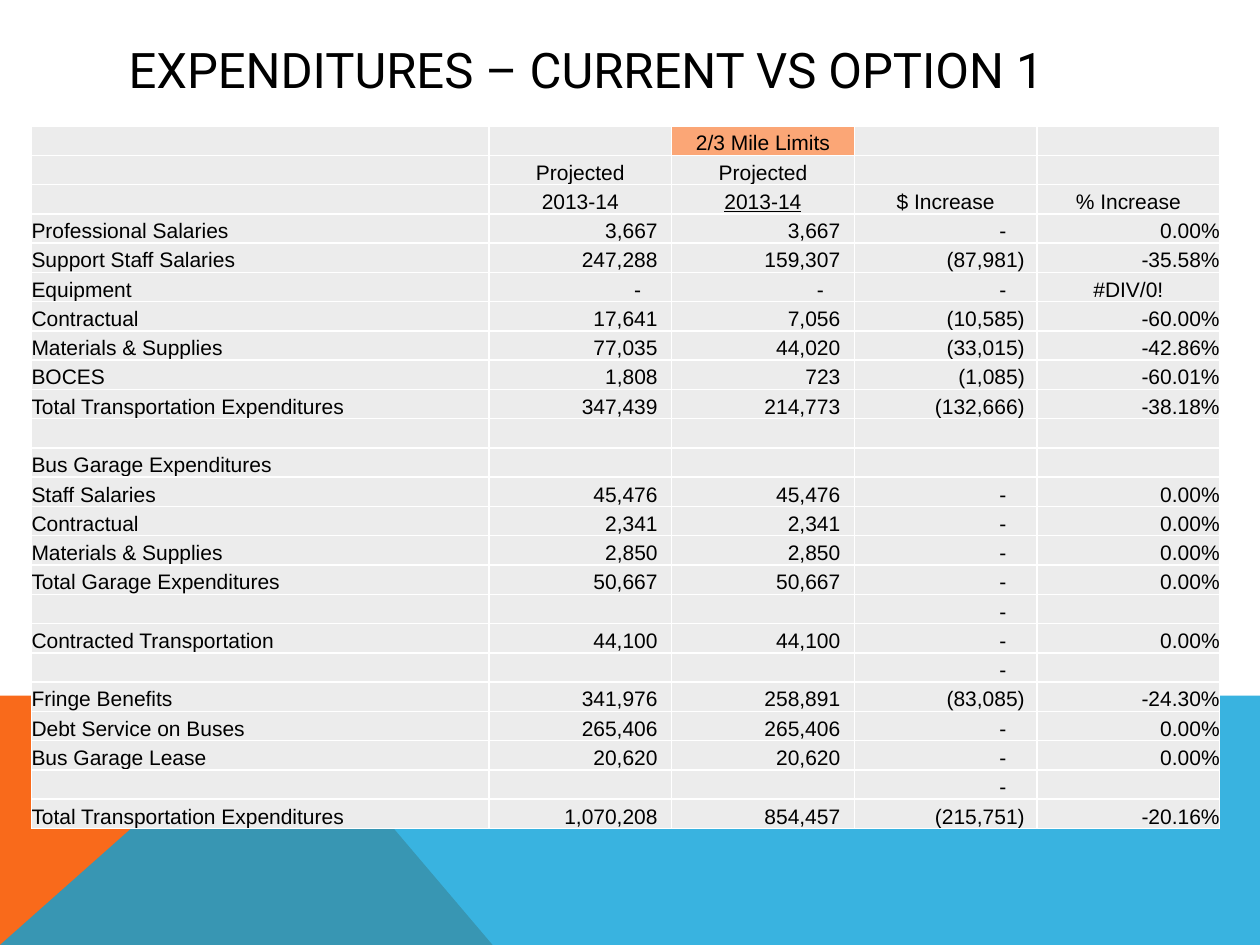
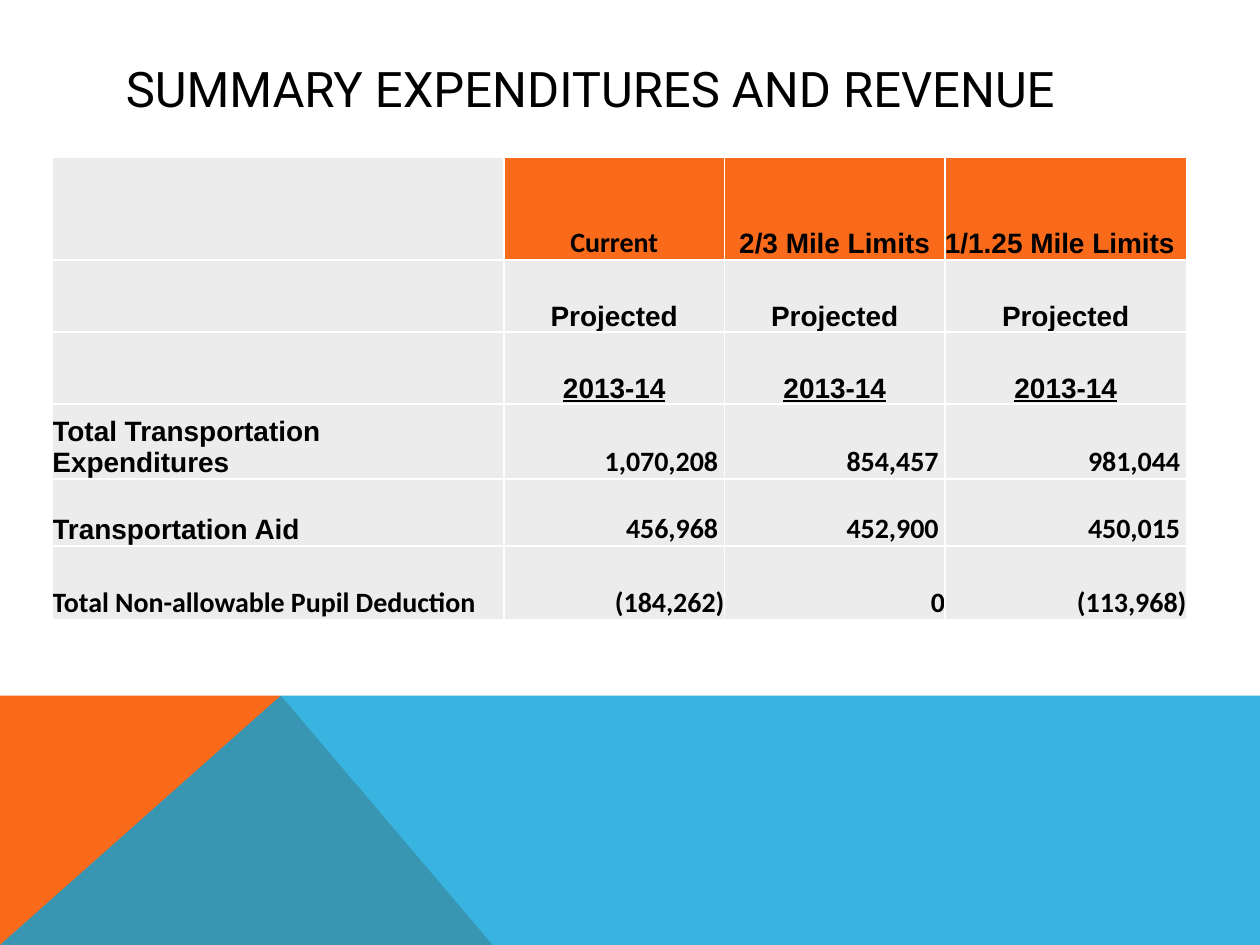
from lxml.etree import SubElement
from pptx import Presentation
from pptx.dml.color import RGBColor
from pptx.enum.text import MSO_ANCHOR as Anchor, PP_ALIGN as Align
from pptx.oxml.ns import qn
from pptx.util import Pt

COLORS = {
    "orange": "F96A1B",
    "peach": "FBA676",
    "blue": "08A1D9",
    "gray": "ECECEC",
    "white": "FFFFFF",
    "black": "000000",
}
SLIDE_W, SLIDE_H = 720, 540
BAND_TOP, BAND_PEAK, BAND_FOOT = 397.5, 160.5, 281.5
ORANGE_BAND = [(0, SLIDE_H), (0, BAND_TOP), (BAND_PEAK, BAND_TOP), (BAND_FOOT, SLIDE_H)]
BLUE_BAND = [(0, SLIDE_H), (BAND_PEAK, BAND_TOP), (SLIDE_W, BAND_TOP), (SLIDE_W, SLIDE_H)]

EXPENDITURES = [
    ("", "", "2/3 Mile Limits", "", ""),
    ("", "Projected", "Projected", "", ""),
    ("", "2013-14", "2013-14", "$ Increase", "% Increase"),
    ("Professional Salaries", "3,667", "3,667", "-", "0.00%"),
    ("Support Staff Salaries", "247,288", "159,307", "(87,981)", "-35.58%"),
    ("Equipment", "-", "-", "-", "#DIV/0!"),
    ("Contractual", "17,641", "7,056", "(10,585)", "-60.00%"),
    ("Materials & Supplies", "77,035", "44,020", "(33,015)", "-42.86%"),
    ("BOCES", "1,808", "723", "(1,085)", "-60.01%"),
    ("Total Transportation Expenditures", "347,439", "214,773", "(132,666)", "-38.18%"),
    ("", "", "", "", ""),
    ("Bus Garage Expenditures", "", "", "", ""),
    ("Staff Salaries", "45,476", "45,476", "-", "0.00%"),
    ("Contractual", "2,341", "2,341", "-", "0.00%"),
    ("Materials & Supplies", "2,850", "2,850", "-", "0.00%"),
    ("Total Garage Expenditures", "50,667", "50,667", "-", "0.00%"),
    ("", "", "", "-", ""),
    ("Contracted Transportation", "44,100", "44,100", "-", "0.00%"),
    ("", "", "", "-", ""),
    ("Fringe Benefits", "341,976", "258,891", "(83,085)", "-24.30%"),
    ("Debt Service on Buses", "265,406", "265,406", "-", "0.00%"),
    ("Bus Garage Lease", "20,620", "20,620", "-", "0.00%"),
    ("", "", "", "-", ""),
    ("Total Transportation Expenditures", "1,070,208", "854,457", "(215,751)", "-20.16%"),
]
SUMMARY = [
    ("", "Current", "2/3 Mile Limits", "1/1.25 Mile Limits"),
    ("", "Projected", "Projected", "Projected"),
    ("", "2013-14", "2013-14", "2013-14"),
    ("Total Transportation Expenditures", "1,070,208", "854,457", "981,044"),
    ("Transportation Aid", "456,968", "452,900", "450,015"),
    ("Total Non-allowable Pupil Deduction", "(184,262)", "0", "(113,968)"),
]
HEADER_ROWS = 3


def rgb(name):
    """Return the named colour."""
    return RGBColor.from_string(COLORS[name])


def write(frame, text, size=12, font="Arial", bold=False, underline=False, align=Align.LEFT):
    """Write one formatted paragraph, keeping the size when it is empty."""
    paragraph = frame.paragraphs[0]
    paragraph.alignment = align
    if not text:
        SubElement(paragraph._p, qn("a:endParaRPr"), sz=str(size * 100))
        return
    run = paragraph.add_run()
    run.text = text
    run.font.size, run.font.name = Pt(size), font
    run.font.bold, run.font.underline = bold, underline
    run.font.color.rgb = rgb("black")


def add_band(slide, layout, corners, color, opacity=100):
    """Draw a bottom band and hand it to the shared layout."""
    outline = slide.shapes.build_freeform(Pt(corners[0][0]), Pt(corners[0][1]))
    outline.add_line_segments([(Pt(x), Pt(y)) for x, y in corners[1:]], close=True)
    band = outline.convert_to_shape()
    band.shadow.inherit = False
    band.line.fill.background()
    band.fill.solid()
    band.fill.fore_color.rgb = rgb(color)
    tint = band.element.spPr.find(qn("a:solidFill"))[0]
    SubElement(tint, qn("a:alpha"), val=str(opacity * 1000))
    band.element.nvSpPr.cNvPr.id = 20 + len(layout.shapes)
    layout.shapes.element.append(band.element)


def add_title(slide, text, left, top):
    """Place and format the slide title."""
    title = slide.shapes.title
    title.left, title.top, title.width, title.height = Pt(left), Pt(top), Pt(592.5), Pt(43)
    title.text_frame.vertical_anchor = Anchor.MIDDLE
    write(title.text_frame, text, size=28, font="Roboto")


def add_borders(cell):
    """Give a cell thin white borders."""
    properties = cell._tc.get_or_add_tcPr()
    for side in ("lnL", "lnR", "lnT", "lnB"):
        border = SubElement(properties, qn(f"a:{side}"), w=str(Pt(1)))
        SubElement(SubElement(border, qn("a:solidFill")), qn("a:srgbClr"), val=COLORS["white"])


def add_grid(slide, left, top, widths, heights, rows, cell_style):
    """Add a table whose cells follow cell_style(row, column, text)."""
    grid = slide.shapes.add_table(
        len(heights), len(widths), Pt(left), Pt(top), Pt(sum(widths)), Pt(sum(heights))
    ).table
    grid.first_row = grid.horz_banding = False
    for column, width in zip(grid.columns, widths):
        column.width = Pt(width)
    for line, height in zip(grid.rows, heights):
        line.height = Pt(height)
    for r, values in enumerate(rows):
        for c, text in enumerate(values):
            fill, inset, text_format = cell_style(r, c, text)
            cell = grid.cell(r, c)
            cell.margin_left = cell.margin_top = cell.margin_bottom = 0
            cell.margin_right = Pt(inset)
            cell.vertical_anchor = Anchor.BOTTOM
            add_borders(cell)
            cell.fill.solid()
            cell.fill.fore_color.rgb = rgb(fill)
            write(cell.text_frame, text, **text_format)


def expenditure_style(row, column, text):
    """Return fill, right inset and text format for the expenditures table."""
    fill = "peach" if (row, column) == (0, 2) else "gray"
    if row < HEADER_ROWS or text == "#DIV/0!":
        return fill, 0, {"align": Align.CENTER, "underline": (row, column) == (2, 2)}
    if column == 0:
        return fill, 0, {"align": Align.LEFT}
    inset = 0 if column == 4 else 17.5 if text == "-" else 7 if text.endswith(")") else 8
    return fill, inset, {"align": Align.RIGHT}


def summary_style(row, column, text):
    """Return fill, right inset and text format for the summary table."""
    is_header = row < HEADER_ROWS
    is_amount = not is_header and column > 0
    is_calibri = is_amount or row == 5 or text == "Current"
    if is_amount:
        align = Align.RIGHT
    elif is_header and (row, column) != (0, 3):
        align = Align.CENTER
    else:
        align = Align.LEFT
    fill = "orange" if row == 0 and column > 0 else "gray"
    inset = 3.6 if is_amount and row < 5 else 0
    return fill, inset, {
        "size": 16,
        "font": "Calibri" if is_calibri else "Arial",
        "bold": True,
        "underline": row == 2,
        "align": align,
    }


def main():
    """Build the two budget slides."""
    deck = Presentation()
    deck.slide_width, deck.slide_height = Pt(SLIDE_W), Pt(SLIDE_H)
    layout = deck.slide_layouts[5]

    comparison = deck.slides.add_slide(layout)
    add_band(comparison, layout, ORANGE_BAND, "orange")
    add_band(comparison, layout, BLUE_BAND, "blue", opacity=80)
    add_title(comparison, "EXPENDITURES – CURRENT VS OPTION 1", 66.25, 18)
    add_grid(comparison, 18, 72, [261.4] + [104.4] * 4, [16.74] * len(EXPENDITURES),
             EXPENDITURES, expenditure_style)

    summary = deck.slides.add_slide(layout)
    add_title(summary, "SUMMARY EXPENDITURES AND REVENUE", 64.75, 29)
    add_grid(summary, 30, 90, [258, 126, 126, 138], [58.5, 41.2, 41.2, 42.8, 38.3, 42.5],
             SUMMARY, summary_style)

    deck.save("out.pptx")


if __name__ == "__main__":
    main()
